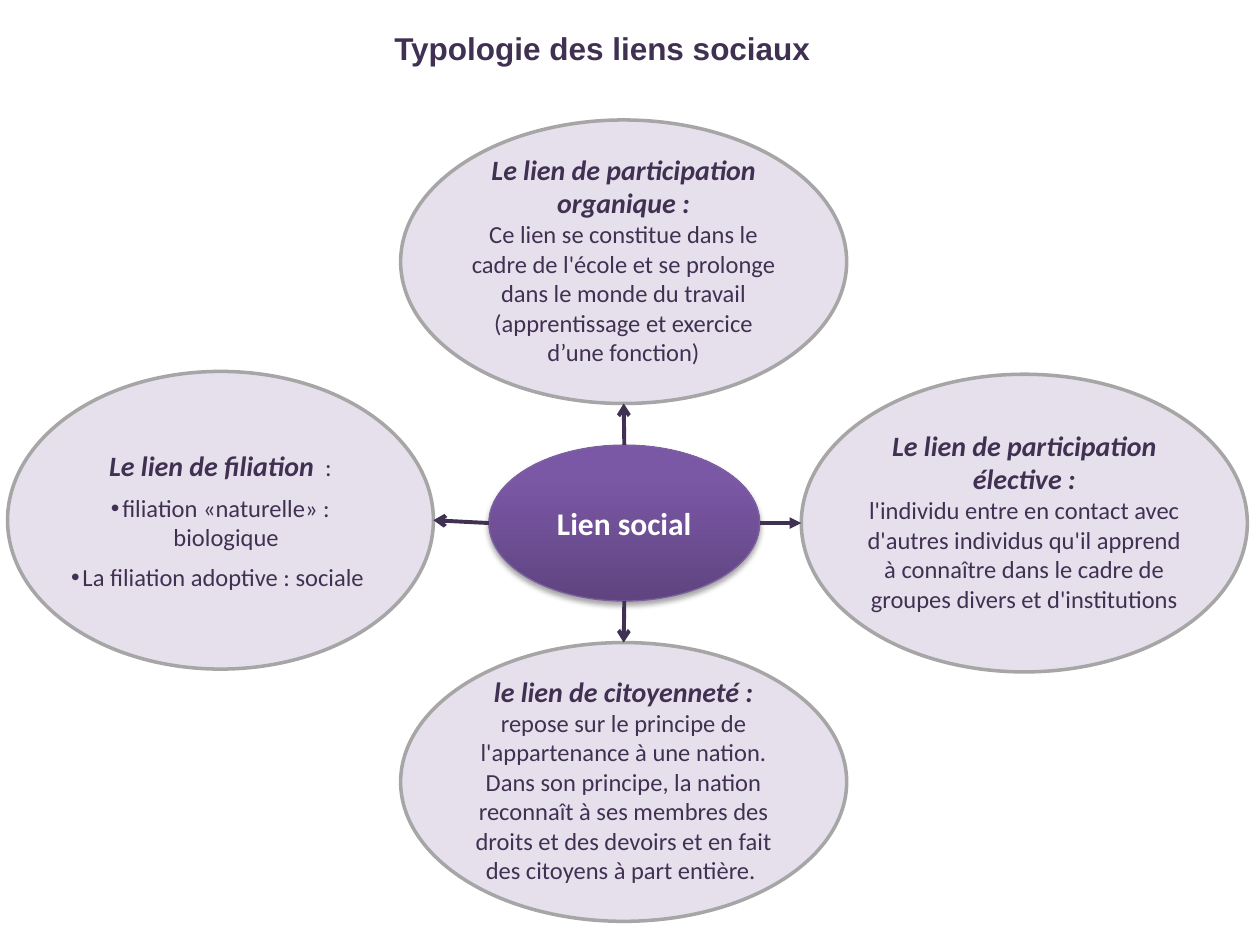
from lxml import etree
from pptx import Presentation
from pptx.dml.color import RGBColor
from pptx.enum.shapes import MSO_CONNECTOR, MSO_SHAPE
from pptx.enum.text import MSO_ANCHOR, MSO_AUTO_SIZE, PP_ALIGN
from pptx.oxml import parse_xml
from pptx.oxml.ns import nsdecls, qn
from pptx.util import Inches, Pt

ELLIPSE = MSO_SHAPE.OVAL
STRAIGHT = MSO_CONNECTOR.STRAIGHT
MIDDLE, TOP = MSO_ANCHOR.MIDDLE, MSO_ANCHOR.TOP
CENTER, LEFT = PP_ALIGN.CENTER, PP_ALIGN.LEFT
TITLE_ONLY = 5
WIDTH, HEIGHT = Inches(10), Inches(7.5)
INK, PALE, GREY, WHITE = "403152", "E6E0EC", "A6A6A6", "FFFFFF"
HEADING = {"size": Pt(16), "name": "Calibri", "bold": True, "italic": True}
BODY = {"size": Pt(14), "name": "Calibri", "bold": False, "italic": False}
BODY_ITALIC = {**BODY, "italic": True}
HUB_FONT = {"size": Pt(18), "name": "Calibri", "bold": True}
TITLE_FONT = {"size": Pt(18), "name": "Arial", "bold": True}

TITLE_BOX = (0.303, 0.024, 0.361, 0.053)
HUB_BOX = (0.388, 0.471, 0.215, 0.165)
SIDE_POINTS = {"top": (0.5, 0), "left": (0, 0.5), "bottom": (0.5, 1), "right": (1, 0.5)}
OPPOSITE = {"top": "bottom", "bottom": "top", "left": "right", "right": "left"}

BUBBLES = [
    {"side": "left", "box": (0.006, 0.393, 0.338, 0.315), "head": "arrow", "bottom": 0,
     "heading": [("Le lien de filiation", HEADING), ("  ", BODY_ITALIC), (":", BODY)],
     "bullets": ["filiation «naturelle» : biologique", "La filiation adoptive : sociale "]},
    {"side": "right", "box": (0.636, 0.396, 0.354, 0.315), "head": "triangle", "bottom": 0.04,
     "heading": [("Le lien de participation élective :", HEADING)],
     "body": "l'individu entre en contact avec d'autres individus qu'il apprend "
             "à connaître dans le cadre de groupes divers et d'institutions"},
    {"side": "top", "box": (0.318, 0.127, 0.354, 0.3), "head": "arrow", "bottom": 0.04,
     "heading": [("Le lien de participation organique :", HEADING)],
     "body": "Ce lien se constitue dans le cadre de l'école et se prolonge "
             "dans le monde du travail (apprentissage et exercice d’une fonction)"},
    {"side": "bottom", "box": (0.318, 0.68, 0.354, 0.295), "head": "arrow", "bottom": 0.04,
     "heading": [("le lien de citoyenneté :", HEADING)],
     "body": "repose sur le principe de l'appartenance à une nation. Dans son principe, "
             "la nation reconnaît à ses membres des droits et des devoirs et en fait "
             "des citoyens à part entière. "},
]


def color(value):
    """Turn a hex string into a colour."""
    return RGBColor.from_string(value)


def apply(target, values):
    """Set every attribute named in a dict."""
    for name, value in values.items():
        setattr(target, name, value)


def place(box):
    """Convert a box in shares of the slide to lengths."""
    left, top, width, height = box
    return [round(share * size) for share, size in
            ((left, WIDTH), (top, HEIGHT), (width, WIDTH), (height, HEIGHT))]


def side_point(box, side):
    """Return the middle of one side of a box."""
    left, top, width, height = place(box)
    across, down = SIDE_POINTS[side]
    return round(left + across * width), round(top + down * height)


def write(paragraph, runs, hex_color, alignment=CENTER):
    """Fill a paragraph with formatted runs."""
    paragraph.alignment = alignment
    for text, font_format in runs:
        run = paragraph.add_run()
        run.text = text
        apply(run.font, font_format)
        run.font.color.rgb = color(hex_color)


def add_bullet(paragraph):
    """Give a paragraph a hanging round bullet."""
    paragraph.space_before = Pt(6)
    properties = paragraph._p.get_or_add_pPr()
    properties.set("marL", str(Inches(0.09)))
    properties.set("indent", str(-Inches(0.09)))
    etree.SubElement(properties, qn("a:buFont")).set("typeface", "Arial")
    etree.SubElement(properties, qn("a:buChar")).set("char", "•")


def add_ellipse(slide, box, line_color, line_width):
    """Add an outlined ellipse without a shadow."""
    shape = slide.shapes.add_shape(ELLIPSE, *place(box))
    shape.shadow.inherit = False
    shape.line.color.rgb = color(line_color)
    shape.line.width = Pt(line_width)
    apply(shape.text_frame, {"word_wrap": True, "vertical_anchor": MIDDLE})
    return shape


def add_title(slide, box):
    """Write the slide title in its placeholder."""
    title = slide.shapes.title
    apply(title, dict(zip(("left", "top", "width", "height"), place(box))))
    apply(title.text_frame, {"word_wrap": False, "vertical_anchor": TOP,
                             "auto_size": MSO_AUTO_SIZE.SHAPE_TO_FIT_TEXT})
    write(title.text_frame.paragraphs[0],
          [("Typologie des liens sociaux", TITLE_FONT)], INK, LEFT)


def add_hub(slide, box):
    """Add the shaded central ellipse."""
    hub = add_ellipse(slide, box, "7D60A0", 0.75)
    hub.fill.gradient()
    hub.fill.gradient_angle = 90
    for stop, position, value in zip(hub.fill.gradient_stops, (0, 0.8), ("5F4480", "7B58A6")):
        stop.position = position
        stop.color.rgb = color(value)
    hub._element.spPr.find(qn("a:effectLst")).append(parse_xml(
        f'<a:outerShdw {nsdecls("a")} blurRad="{Pt(3.1)}" dist="{Pt(1.8)}" dir="5400000" '
        'rotWithShape="0"><a:srgbClr val="000000"><a:alpha val="35000"/></a:srgbClr>'
        '</a:outerShdw>'))
    write(hub.text_frame.paragraphs[0], [("Lien social", HUB_FONT)], WHITE)


def add_bubble(slide, bubble):
    """Add one outer ellipse with its heading and text."""
    shape = add_ellipse(slide, bubble["box"], GREY, 2)
    shape.fill.solid()
    shape.fill.fore_color.rgb = color(PALE)
    frame = shape.text_frame
    apply(frame, {"margin_left": 0, "margin_top": 0, "margin_right": 0,
                  "margin_bottom": Inches(bubble["bottom"])})
    write(frame.paragraphs[0], bubble["heading"], INK)
    if "body" in bubble:
        write(frame.add_paragraph(), [(bubble["body"], BODY)], INK)
    for text in bubble.get("bullets", []):
        paragraph = frame.add_paragraph()
        write(paragraph, [(text, BODY)], INK)
        add_bullet(paragraph)


def add_arrow(slide, hub_box, bubble):
    """Draw an arrow from the hub to a bubble."""
    side = bubble["side"]
    arrow = slide.shapes.add_connector(
        STRAIGHT, *side_point(hub_box, side), *side_point(bubble["box"], OPPOSITE[side]))
    arrow.line.color.rgb = color(INK)
    arrow.line.width = Pt(2.25)
    etree.SubElement(arrow.line._get_or_add_ln(), qn("a:tailEnd")).set("type", bubble["head"])
    etree.SubElement(arrow._element.spPr, qn("a:effectLst"))


def main():
    """Build and save the slide."""
    presentation = Presentation()
    apply(presentation, {"slide_width": WIDTH, "slide_height": HEIGHT})
    slide = presentation.slides.add_slide(presentation.slide_layouts[TITLE_ONLY])
    add_title(slide, TITLE_BOX)
    add_hub(slide, HUB_BOX)
    for bubble in BUBBLES:
        add_bubble(slide, bubble)
    for bubble in BUBBLES:
        add_arrow(slide, HUB_BOX, bubble)
    presentation.save("out.pptx")


if __name__ == "__main__":
    main()
